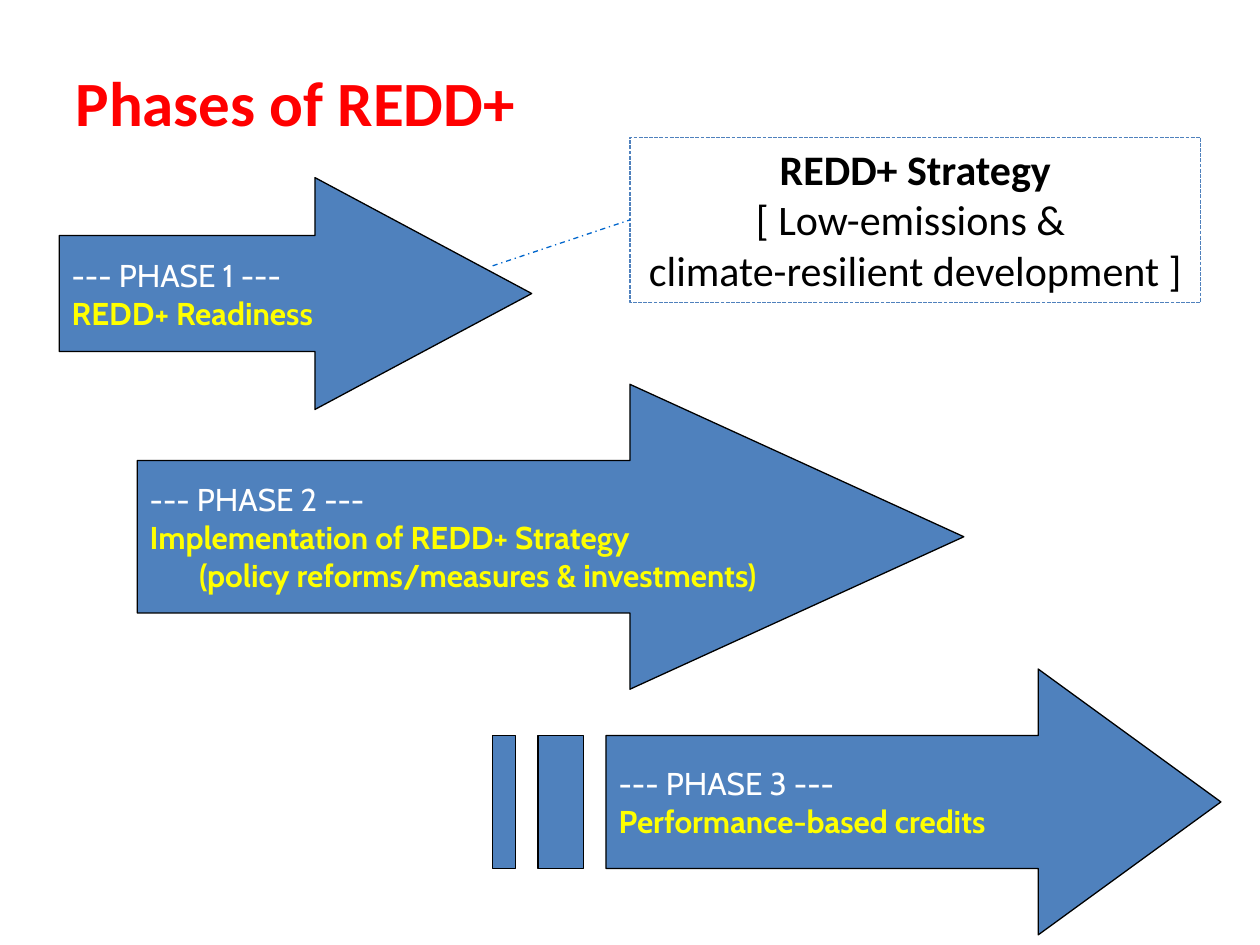
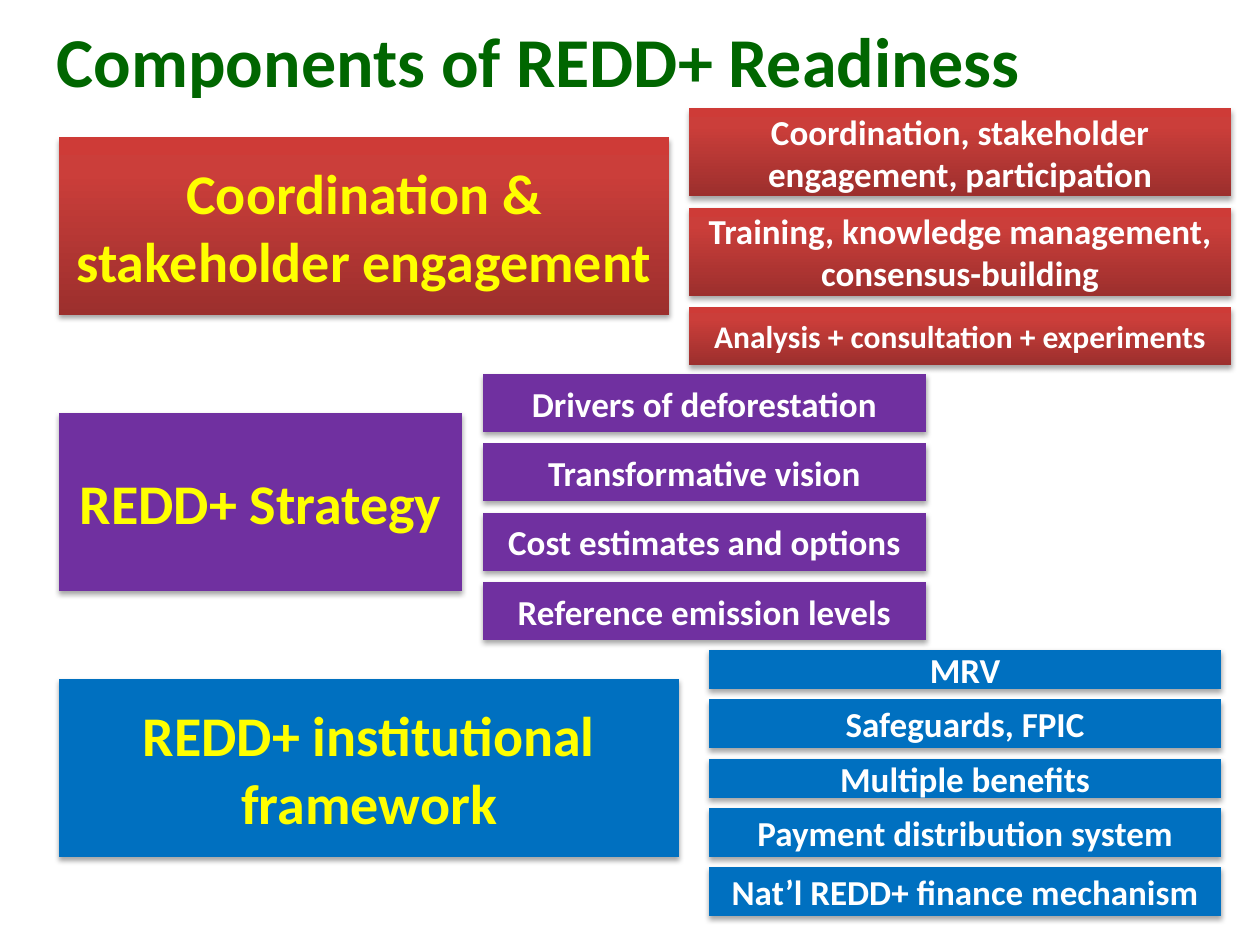
from copy import deepcopy
from lxml import etree
from pptx import Presentation
from pptx import util as u
from pptx.dml.color import RGBColor
from pptx.enum import dml, shapes, text
from pptx.oxml.ns import qn

RED, GREEN, YELLOW, WHITE, BLACK = "FF0000", "006600", "FFFF00", "FFFFFF", "000000"
STEEL, PURPLE, BLUE = "4F81BD", "7030A0", "0070C0"
BRICK = [(0, "9C2F2D"), (0.8, "CB3E3A"), (1, "CE3B37")]
LEFT, CENTER = text.PP_ALIGN.LEFT, text.PP_ALIGN.CENTER
TOP, MIDDLE = text.MSO_ANCHOR.TOP, text.MSO_ANCHOR.MIDDLE
KIND = shapes.MSO_SHAPE
EDGE = 0.47  # shared left edge of the content


def color(code):
    return RGBColor.from_string(code)


def inches(*values):
    return [u.Inches(v) for v in values]


def write(shape, words, size, code, bold=True, font="Calibri", align=CENTER, anchor=MIDDLE):
    frame = shape.text_frame
    frame.text = words
    frame.word_wrap = True
    frame.vertical_anchor = anchor
    for para in frame.paragraphs:
        para.alignment = align
        for run in para.runs:
            style(run, size, code, bold, font)


def style(run, size, code, bold, font):
    run.font.size = u.Pt(size)
    run.font.name = font
    run.font.bold = bold
    run.font.color.rgb = color(code)


def outline(line, code, dash=None):
    line.color.rgb = color(code)
    line.width = u.Pt(0.75)
    if dash:
        line.dash_style = dash


def title(slide, box, words, size, code):
    write(slide.shapes.add_textbox(*inches(*box)), words, size, code)


# Slide 1: phase arrows

def label(shape, number, words):
    """Fill a phase arrow and write its number and name."""
    shape.shadow.inherit = False
    shape.fill.solid()
    shape.fill.fore_color.rgb = color(STEEL)
    outline(shape.line, BLACK)
    write(shape, f"--- PHASE {number} ---\n{words}", 18, YELLOW, font="Cabin", align=LEFT)
    style(shape.text_frame.paragraphs[0].runs[0], 18, WHITE, False, "Cabin")


def arrow(slide, box, head, number, words):
    shape = slide.shapes.add_shape(KIND.RIGHT_ARROW, *inches(*box))
    shape.adjustments[0] = 0.5
    shape.adjustments[1] = head / box[3]
    label(shape, number, words)
    return shape


def striped(slide, box, head, number, words):
    """Arrow led in by two bars that grow towards it."""
    left, top, width, height = box
    gap = 0.18
    high, low = top + height / 4, top + height * 3 / 4
    neck = left + width - head
    outer = [(neck, top), (neck, high), (left, high), (left, low), (neck, low),
             (neck, top + height), (left + width, top + height / 2)]
    parts = [outer]
    for start, wide in ((left - 3 * gap, 2 * gap), (left - 5 * gap, gap)):
        parts.append([(start, high), (start, low), (start + wide, low), (start + wide, high)])
    pen = None
    for part in parts:
        spots = [inches(*spot) for spot in part]
        if pen is None:
            pen = slide.shapes.build_freeform(*spots[0])
        else:
            pen.move_to(*spots[0])
        pen.add_line_segments(spots[1:], close=True)
    shape = pen.convert_to_shape()
    label(shape, number, words)
    shape.text_frame.margin_left = u.Inches(5 * gap + 0.1)


def callout(slide, box, start):
    note = slide.shapes.add_shape(KIND.RECTANGLE, *inches(*box))
    note.shadow.inherit = False
    note.fill.background()
    outline(note.line, STEEL, dml.MSO_LINE.SQUARE_DOT)
    write(note, "REDD+ Strategy\n[ Low-emissions & \nclimate-resilient development ]",
          24, BLACK, bold=False, anchor=TOP)
    note.text_frame.paragraphs[0].runs[0].font.bold = True
    # Leader line to the box
    link = slide.shapes.add_connector(shapes.MSO_CONNECTOR.STRAIGHT, *inches(*start, *start))
    link.end_connect(note, 1)
    outline(link.line, "0066CC", dml.MSO_LINE.DASH_DOT)
    etree.SubElement(link._element.spPr, qn("a:effectLst"))


def phases(slide):
    title(slide, (0.08, 0.28, 4.53, 1.05), "Phases of REDD+", 36, RED)
    second = arrow(slide, (1.09, 3.05, 6.56, 2.42), 2.65, 2,
                   "Implementation of REDD+ Strategy\n(policy reforms/measures & investments)")
    detail = second.text_frame.paragraphs[2]
    detail.alignment = CENTER
    detail._p.get_or_add_pPr().set("marL", str(u.Inches(0.17)))
    arrow(slide, (EDGE, 1.41, 3.75, 1.84), 1.72, 1, "REDD+ Readiness")
    striped(slide, (4.81, 5.31, 4.88, 2.11), 1.45, 3, "Performance-based credits")
    callout(slide, (5, 1.09, 4.53, 1.31), (3.91, 2.11))


# Slide 2: component groups

def shade(shape):
    shape.shadow.inherit = False
    effects = shape._element.spPr.find(qn("a:effectLst"))
    outer = etree.SubElement(effects, qn("a:outerShdw"), blurRad=str(u.Pt(3.1)),
                             dist=str(u.Pt(1.8)), dir="5400000", rotWithShape="0")
    tint = etree.SubElement(outer, qn("a:srgbClr"), val=BLACK)
    etree.SubElement(tint, qn("a:alpha"), val="35000")


def blend(fill, stops):
    fill.gradient()
    fill.gradient_angle = 90
    first = fill._xPr.find(".//" + qn("a:gs"))
    first.getparent().append(deepcopy(first))
    for stop, (place, code) in zip(fill.gradient_stops, stops):
        stop.position = place
        stop.color.rgb = color(code)


def block(slide, box, paint, words, size, code):
    shape = slide.shapes.add_shape(KIND.FLOWCHART_PROCESS, *inches(*box))
    if isinstance(paint, list):
        blend(shape.fill, paint)
    else:
        shape.fill.solid()
        shape.fill.fore_color.rgb = color(paint)
    shape.line.fill.background()
    shade(shape)
    write(shape, words, size, code)


def group(slide, paint, name, top, width, stack, gap, items):
    """Draw a main block and, beside it, its stack of items."""
    block(slide, (EDGE, top, width, 1.41), paint, name, 32, YELLOW)
    left, y, wide = stack
    for words, height, size in items:
        block(slide, (left, y, wide, height), paint, words, size, WHITE)
        y += height + gap


def parts(slide):
    title(slide, (0.31, 0.09, 7.93, 0.77), "Components of REDD+ Readiness", 40, GREEN)
    group(slide, BRICK, "Coordination &\nstakeholder engagement", 1.09, 4.84,
          (5.47, 0.86, 4.3), 0.09,
          [("Coordination, stakeholder engagement, participation", 0.7, 20),
           ("Training, knowledge management, consensus-building", 0.7, 20),
           ("Analysis + consultation + experiments", 0.46, 18)])
    group(slide, PURPLE, "REDD+ Strategy", 3.28, 3.2, (3.83, 2.97, 3.52), 0.09,
          [(words, 0.46, 20) for words in (
              "Drivers of deforestation", "Transformative vision",
              "Cost estimates and options", "Reference emission levels")])
    group(slide, BLUE, "REDD+ institutional framework", 5.39, 4.92,
          (5.63, 5.16, 4.06), 0.08,
          [("MRV", 0.31, 20), ("Safeguards, FPIC", 0.39, 20),
           ("Multiple benefits", 0.31, 20), ("Payment distribution system", 0.39, 20),
           ("Nat’l REDD+ finance mechanism", 0.39, 20)])


def main():
    deck = Presentation()
    deck.slide_width, deck.slide_height = inches(10, 7.5)
    for draw in (phases, parts):
        draw(deck.slides.add_slide(deck.slide_layouts[6]))
    deck.save("out.pptx")


if __name__ == "__main__":
    main()
